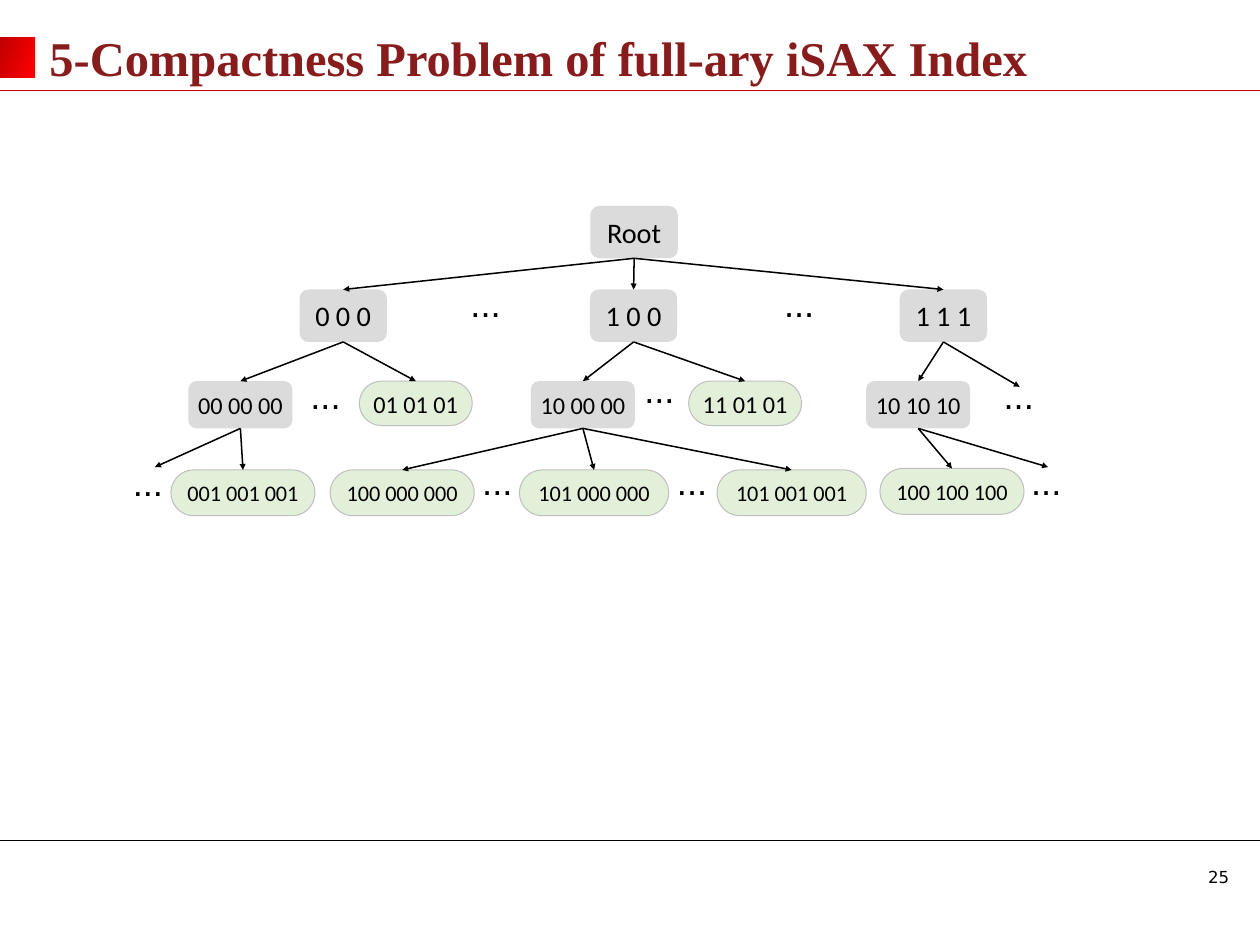
import pptx
import pptx.util
import pptx.dml.color
import pptx.enum.shapes
import pptx.enum.text
from lxml import etree
from pptx.util import Cm, Pt

COLORS = {"title": "881C1C", "text": "000000", "inner": "DBDBDB", "leaf": "E2F0D9",
          "leaf_line": "BFBFBF", "red": "C00000", "bright": "FF0000"}
NS = "http://schemas.openxmlformats.org/drawingml/2006/main"
MSO = pptx.enum.shapes.MSO_SHAPE
CENTER = pptx.enum.text.PP_ALIGN.CENTER
MIDDLE = pptx.enum.text.MSO_ANCHOR.MIDDLE


def set_font(p, name, size, color="text"):
    p.font.name = name
    p.font.size = Pt(size)
    p.font.color.rgb = pptx.dml.color.RGBColor.from_string(COLORS[color])


def add_line(x1, y1, x2, y2, color="text", width=1, arrow=False):
    c = s.shapes.add_connector(pptx.enum.shapes.MSO_CONNECTOR.STRAIGHT,
                               Cm(x1), Cm(y1), Cm(x2), Cm(y2))
    c.line.color.rgb = pptx.dml.color.RGBColor.from_string(COLORS[color])
    c.line.width = Pt(width)
    if arrow:
        etree.SubElement(c.line._get_or_add_ln(), f"{{{NS}}}tailEnd", type="triangle")
    etree.SubElement(c._element.spPr, f"{{{NS}}}effectLst")
    return c


prs = pptx.Presentation()
prs.slide_width, prs.slide_height = Cm(44), Cm(33)
s = prs.slides.add_slide(prs.slide_layouts[5])

add_line(0, 29.34, 44, 29.34)
add_line(0, 3.15, 44, 3.15, "red")

marker = s.shapes.add_shape(MSO.RECTANGLE, Cm(0), Cm(1.3), Cm(1.2), Cm(1.4))
marker.shadow.inherit = False
marker.line.fill.background()
marker.fill.gradient()
marker.fill.gradient_angle = 340
for stop, color in zip(marker.fill.gradient_stops, ("red", "bright")):
    stop.color.rgb = pptx.dml.color.RGBColor.from_string(COLORS[color])

title = s.shapes.title
title.left, title.top, title.width, title.height = Cm(1.47), Cm(0.53), Cm(35.9), Cm(2.95)
title.text_frame.text = "5-Compactness Problem of full-ary iSAX Index"
title.text_frame.vertical_anchor = MIDDLE
p = title.text_frame.paragraphs[0]
p.alignment = pptx.enum.text.PP_ALIGN.LEFT
p.font.bold = True
set_font(p, "Times New Roman", 48, "title")

tb = s.shapes.add_textbox(Cm(41.94), Cm(30.15), Cm(2.06), Cm(0.97))
tb.text_frame.text = "25"
set_font(tb.text_frame.paragraphs[0], "DejaVu Sans", 16.4)

STYLES = {
    "top": ("inner", 1.83, 28),
    "middle": ("inner", 1.65, 24),
    "short_leaf": ("leaf", 1.55, 24),
    "long_leaf": ("leaf", 1.6, 22),
}
NODES = [
    ("Root", "top", 20.62, 7.19, 3.05),
    ("0 0 0", "top", 10.46, 10.11, 3.05),
    ("1 0 0", "top", 20.6, 10.11, 3.05),
    ("1 1 1", "top", 31.42, 10.11, 3.05),
    ("00 00 00", "middle", 6.58, 13.31, 3.63),
    ("10 00 00", "middle", 18.54, 13.31, 3.63),
    ("10 10 10", "middle", 30.25, 13.31, 3.63),
    ("01 01 01", "short_leaf", 12.55, 13.31, 3.94),
    ("11 01 01", "short_leaf", 24.05, 13.31, 3.94),
    ("001 001 001", "long_leaf", 5.97, 16.41, 5.03),
    ("100 000 000", "long_leaf", 11.53, 16.41, 5.03),
    ("101 000 000", "long_leaf", 18.14, 16.41, 5.21),
    ("101 001 001", "long_leaf", 25.04, 16.41, 5.21),
    ("100 100 100", "long_leaf", 30.73, 16.36, 5.03),
]
nodes = {}
for label, style, x, y, width in NODES:
    fill, height, size = STYLES[style]
    sp = s.shapes.add_shape(MSO.ROUNDED_RECTANGLE, Cm(x), Cm(y), Cm(width), Cm(height))
    sp.shadow.inherit = False
    sp.fill.solid()
    sp.fill.fore_color.rgb = pptx.dml.color.RGBColor.from_string(COLORS[fill])
    if fill == "leaf":
        sp.adjustments[0] = 0.5
        sp.line.color.rgb = pptx.dml.color.RGBColor.from_string(COLORS["leaf_line"])
        sp.line.width = Pt(1)
    else:
        sp.line.fill.background()
    tf = sp.text_frame
    tf.margin_left = tf.margin_right = 0
    tf.vertical_anchor = MIDDLE
    tf.text = label
    tf.paragraphs[0].alignment = CENTER
    set_font(tf.paragraphs[0], "Calibri", size)
    nodes[label] = sp

CHILDREN = {
    "Root": ["0 0 0", "1 0 0", "1 1 1"],
    "0 0 0": ["00 00 00", "01 01 01"],
    "1 0 0": ["10 00 00", "11 01 01"],
    "1 1 1": ["10 10 10", (35.61, 13.51)],
    "00 00 00": [(5.41, 16.31), "001 001 001"],
    "10 00 00": ["100 000 000", "101 000 000", "101 001 001"],
    "10 10 10": ["100 100 100", (36.6, 16.31)],
}
for parent, children in CHILDREN.items():
    for child in children:
        end = (0, 0) if child in nodes else child
        c = add_line(0, 0, *end, width=1.5, arrow=True)
        c.begin_connect(nodes[parent], 2)
        if child in nodes:
            c.end_connect(nodes[child], 0)

DOTS = [(16.18, 9.7), (27.13, 9.7), (10.59, 12.9), (22.25, 12.7), (34.8, 12.9),
        (4.39, 15.95), (16.59, 15.9), (23.39, 15.9), (35.76, 15.9)]
for x, y in DOTS:
    tb = s.shapes.add_textbox(Cm(x), Cm(y), Cm(1.8), Cm(1.8))
    tb.text_frame.word_wrap = True
    tb.text_frame.text = "..."
    set_font(tb.text_frame.paragraphs[0], "Arial", 36)

prs.save("out.pptx")
